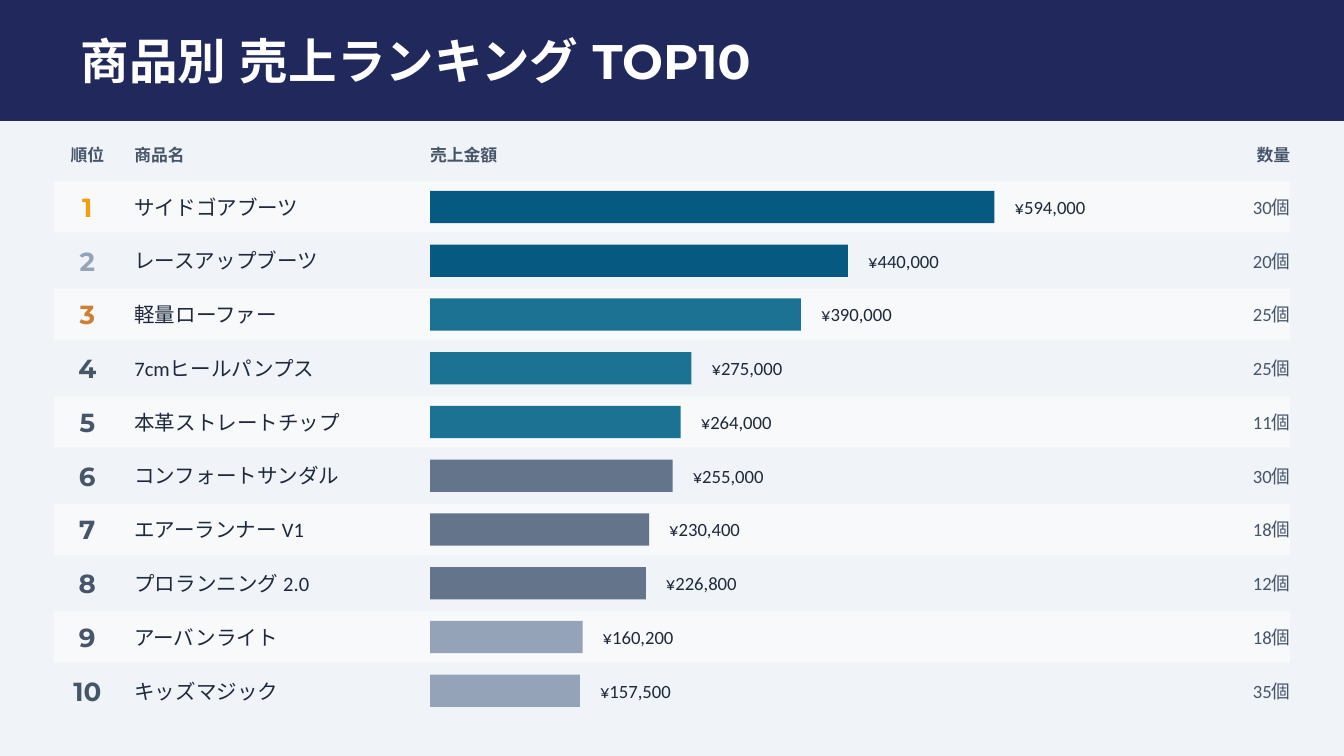
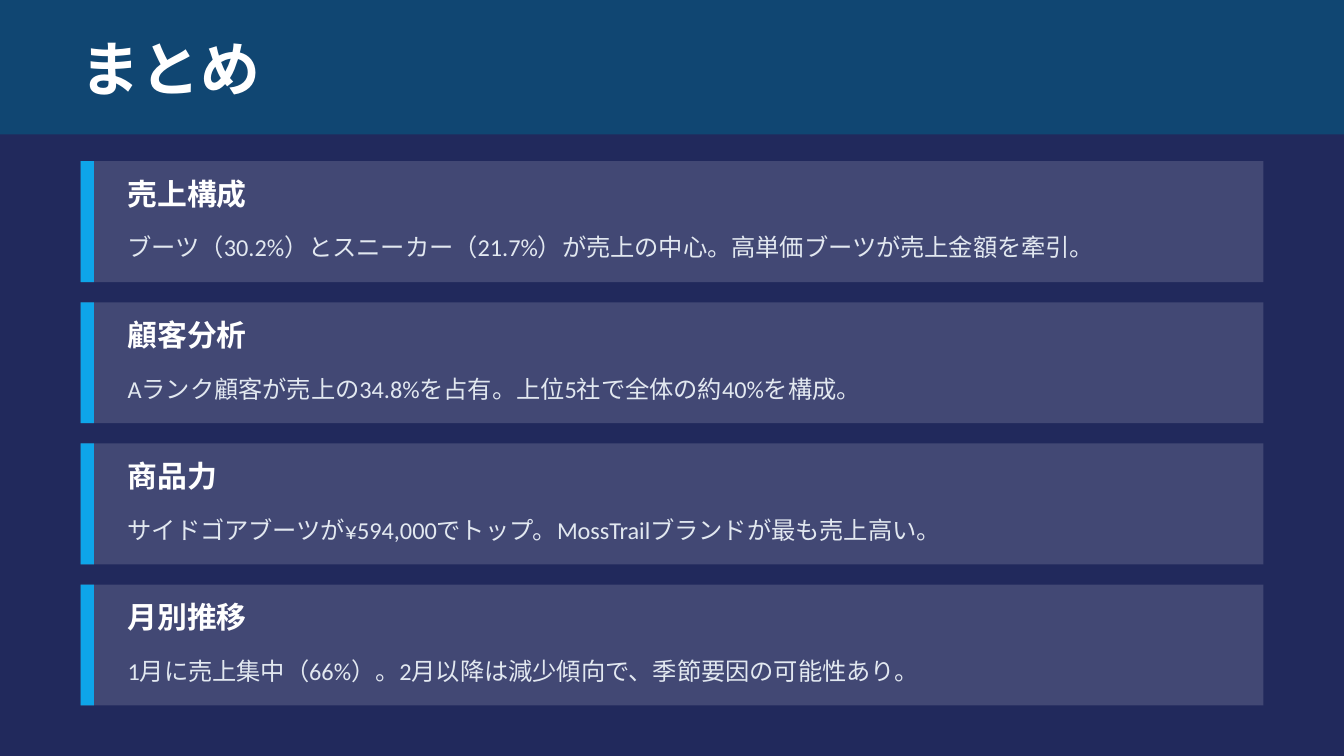
from lxml.etree import SubElement
from pptx import Presentation
from pptx.dml.color import RGBColor
from pptx.enum.shapes import MSO_SHAPE as Preset
from pptx.enum.text import MSO_ANCHOR as Anchor, PP_ALIGN as Align
from pptx.oxml.ns import qn

PX = 4572
WIDTH, HEIGHT = 2000, 1125

NAVY = RGBColor(0x21, 0x29, 0x5C)
DEEP_BLUE = RGBColor(0x06, 0x5A, 0x82)
TEAL = RGBColor(0x1C, 0x72, 0x93)
SKY = RGBColor(0x0E, 0xA5, 0xE9)
STEEL = RGBColor(0x64, 0x74, 0x8B)
SILVER = RGBColor(0x94, 0xA3, 0xB8)
GOLD = RGBColor(0xF5, 0x9E, 0x0B)
BRONZE = RGBColor(0xCD, 0x7F, 0x32)
INK = RGBColor(0x1E, 0x29, 0x3B)
SLATE = RGBColor(0x47, 0x55, 0x69)
PALE = RGBColor(0xF0, 0xF4, 0xF8)
MIST = RGBColor(0xE2, 0xE8, 0xF0)
WHITE = RGBColor(0xFF, 0xFF, 0xFF)

HEADING, BODY = "Montserrat", "Calibri"

PRODUCTS = [
    ("サイドゴアブーツ", 594000, 30),
    ("レースアップブーツ", 440000, 20),
    ("軽量ローファー", 390000, 25),
    ("7cmヒールパンプス", 275000, 25),
    ("本革ストレートチップ", 264000, 11),
    ("コンフォートサンダル", 255000, 30),
    ("エアーランナー V1", 230400, 18),
    ("プロランニング 2.0", 226800, 12),
    ("アーバンライト", 160200, 18),
    ("キッズマジック", 157500, 35),
]
BAR_COLOURS = [DEEP_BLUE] * 2 + [TEAL] * 3 + [STEEL] * 3 + [SILVER] * 2
MEDALS = {1: GOLD, 2: SILVER, 3: BRONZE}

FINDINGS = [
    ("売上構成", "ブーツ（30.2%）とスニーカー（21.7%）が売上の中心。高単価ブーツが売上金額を牽引。"),
    ("顧客分析", "Aランク顧客が売上の34.8%を占有。上位5社で全体の約40%を構成。"),
    ("商品力", "サイドゴアブーツが¥594,000でトップ。MossTrailブランドが最も売上高い。"),
    ("月別推移", "1月に売上集中（66%）。2月以降は減少傾向で、季節要因の可能性あり。"),
]


class Deck:
    def __init__(self):
        self.show = Presentation()
        self.show.slide_width = WIDTH * PX
        self.show.slide_height = HEIGHT * PX
        self.slide = None

    def new_slide(self, background):
        self.slide = self.show.slides.add_slide(self.show.slide_layouts[6])
        fill = self.slide.background.fill
        fill.solid()
        fill.fore_color.rgb = background

    def rect(self, left, top, width, height, colour, opacity=100):
        box = self.slide.shapes.add_shape(
            Preset.RECTANGLE, *(n * PX for n in (left, top, width, height)))
        box.shadow.inherit = False
        box.line.fill.background()
        box.fill.solid()
        box.fill.fore_color.rgb = colour
        if opacity < 100:
            tint = box.fill._xPr.find(".//" + qn("a:srgbClr"))
            SubElement(tint, qn("a:alpha"), val=str(opacity * 1000))

    def text(self, words, left, top, width, height, size=10, font=BODY,
             colour=INK, bold=False, align=Align.LEFT):
        frame = self.slide.shapes.add_textbox(
            *(n * PX for n in (left, top, width, height))).text_frame
        frame.word_wrap = True
        frame.vertical_anchor = Anchor.MIDDLE
        frame.margin_left = frame.margin_right = 0
        frame.margin_top = frame.margin_bottom = 0
        paragraph = frame.paragraphs[0]
        paragraph.alignment = align
        run = paragraph.add_run()
        run.text = words
        run.font.name = font
        run.font.size = size * 12700
        run.font.bold = bold
        run.font.color.rgb = colour
        SubElement(run.font._element, qn("a:ea"), typeface=font)

    def heading(self, words, left, top, width, height, size, colour=WHITE,
                align=Align.LEFT):
        self.text(words, left, top, width, height, size=size, font=HEADING,
                  colour=colour, bold=True, align=align)

    def title_band(self, words, height, colour, top, text_height, size,
                   opacity=100):
        self.rect(0, 0, WIDTH, height, colour, opacity)
        self.heading(words, 120, top, 1760, text_height, size)


def ranking(deck):
    deck.new_slide(PALE)
    deck.title_band("商品別 売上ランキング TOP10", 180, NAVY, 24, 130, 26)

    for label, left, width, align in [
        ("順位", 80, 100, Align.CENTER),
        ("商品名", 200, 400, Align.LEFT),
        ("売上金額", 640, 1000, Align.LEFT),
        ("数量", 1760, 160, Align.RIGHT),
    ]:
        deck.text(label, left, 200, width, 60, size=9, colour=SLATE,
                  bold=True, align=align)

    row_height, longest_bar = 76, 840
    top_sales = PRODUCTS[0][1]
    for rank, (product, sales, quantity) in enumerate(PRODUCTS, 1):
        top = 270 + (rank - 1) * 80
        bar = round(longest_bar * sales / top_sales)
        if rank % 2:
            deck.rect(80, top, 1840, row_height, WHITE, 50)
        deck.heading(str(rank), 80, top, 100, row_height, 14,
                     MEDALS.get(rank, SLATE), Align.CENTER)
        deck.text(product, 200, top, 420, row_height, size=11)
        deck.rect(640, top + 14, bar, 48, BAR_COLOURS[rank - 1])
        deck.text(f"¥{sales:,}", 640 + bar + 30, top, 300, row_height)
        deck.text(f"{quantity}個", 1720, top, 200, row_height,
                  colour=SLATE, align=Align.RIGHT)


def summary(deck):
    deck.new_slide(NAVY)
    deck.title_band("まとめ", 200, DEEP_BLUE, 30, 140, 32, opacity=60)
    for index, (topic, finding) in enumerate(FINDINGS):
        top = 240 + index * 210
        deck.rect(120, top, 1760, 180, WHITE, 15)
        deck.rect(120, top, 20, 180, SKY)
        deck.heading(topic, 190, top + 10, 400, 76, 16)
        deck.text(finding, 190, top + 90, 1640, 76, size=13, colour=MIST)


def main():
    deck = Deck()
    ranking(deck)
    summary(deck)
    deck.show.save("out.pptx")


if __name__ == "__main__":
    main()
